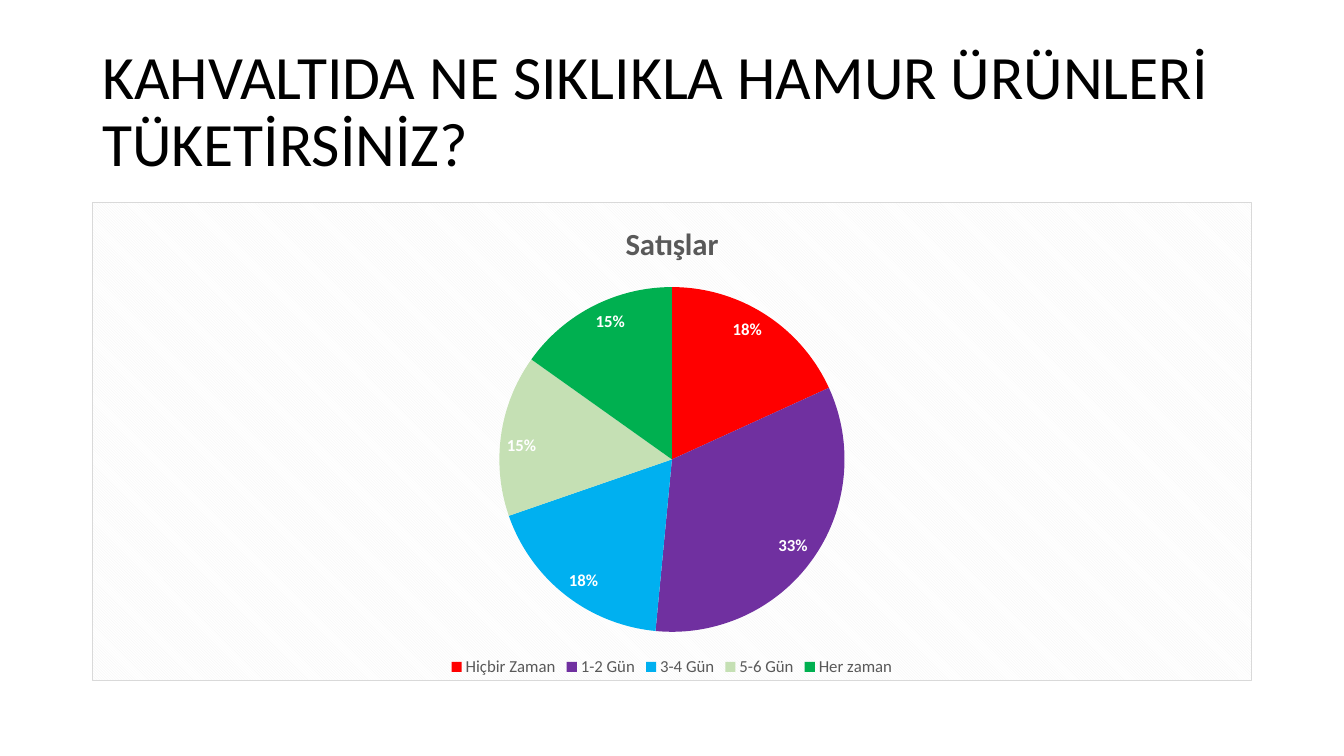
import dataclasses

import pptx
import pptx.chart.data
import pptx.dml.color
import pptx.enum.chart
import pptx.enum.text
import pptx.oxml
import pptx.oxml.ns
import pptx.util

PX = 9525


@dataclasses.dataclass(frozen=True)
class Theme:
    font: str = "Calibri"
    ink: str = "000000"
    muted: str = "595959"
    label: str = "FFFFFF"
    hatch: str = "F2F2F2"
    paper: str = "FFFFFF"
    border: str = "D9D9D9"
    heading_size: int = 44
    chart_title_size: int = 22
    chart_text_size: int = 12


THEME = Theme()

HEADING = "KAHVALTIDA NE SIKLIKLA HAMUR ÜRÜNLERİ TÜKETİRSİNİZ?"
CHART_TITLE = "Satışlar"
ANSWERS = [
    ("Hiçbir Zaman", 18, "FF0000"),
    ("1-2 Gün", 33, "7030A0"),
    ("3-4 Gün", 18, "00B0F0"),
    ("5-6 Gün", 15, "C5E0B4"),
    ("Her zaman", 15, "00B050"),
]


def to_emu(box):
    return [pptx.util.Emu(length * PX) for length in box]


def style_font(font, size, color, bold=False):
    font.name = THEME.font
    font.size = pptx.util.Pt(size)
    font.bold = bold
    font.color.rgb = pptx.dml.color.RGBColor.from_string(color)


def add_heading(slide, box):
    frame = slide.shapes.add_textbox(*to_emu(box)).text_frame
    frame.word_wrap = True
    frame.vertical_anchor = pptx.enum.text.MSO_ANCHOR.MIDDLE
    frame.text = HEADING
    question = frame.paragraphs[0]
    question.line_spacing = 0.9
    style_font(question.runs[0].font, THEME.heading_size, THEME.ink)


def hatch_background(chart):
    background = pptx.oxml.parse_xml(
        f'<c:spPr {pptx.oxml.ns.nsdecls("c", "a")}>'
        '<a:pattFill prst="dkDnDiag">'
        f'<a:fgClr><a:srgbClr val="{THEME.hatch}"/></a:fgClr>'
        f'<a:bgClr><a:srgbClr val="{THEME.paper}"/></a:bgClr>'
        '</a:pattFill>'
        f'<a:ln w="{pptx.util.Pt(0.75)}"><a:solidFill>'
        f'<a:srgbClr val="{THEME.border}"/>'
        '</a:solidFill></a:ln></c:spPr>'
    )
    chart.element.find(pptx.oxml.ns.qn("c:chart")).addnext(background)


def add_answer_chart(slide, box):
    answers = pptx.chart.data.CategoryChartData()
    answers.categories = [name for name, _, _ in ANSWERS]
    answers.add_series(CHART_TITLE, [value for _, value, _ in ANSWERS])
    chart = slide.shapes.add_chart(
        pptx.enum.chart.XL_CHART_TYPE.PIE, *to_emu(box), answers
    ).chart
    style_font(chart.font, THEME.chart_text_size, THEME.muted)
    hatch_background(chart)

    chart.has_title = True
    title = chart.chart_title.text_frame
    title.text = CHART_TITLE
    style_font(title.paragraphs[0].runs[0].font, THEME.chart_title_size, THEME.muted, True)

    chart.has_legend = True
    chart.legend.position = pptx.enum.chart.XL_LEGEND_POSITION.BOTTOM
    chart.legend.include_in_layout = False
    style_font(chart.legend.font, THEME.chart_text_size, THEME.muted)

    pie = chart.plots[0]
    pie.vary_by_categories = True
    for index, (_, _, color) in enumerate(ANSWERS):
        fill = pie.series[0].points[index].format.fill
        fill.solid()
        fill.fore_color.rgb = pptx.dml.color.RGBColor.from_string(color)

    labels = pie.series[0].data_labels
    labels.show_percentage = True
    labels.show_value = False
    labels.number_format = "0%"
    labels.number_format_is_linked = False
    labels.position = pptx.enum.chart.XL_LABEL_POSITION.INSIDE_END
    style_font(labels.font, THEME.chart_text_size, THEME.label, True)


def main():
    deck = pptx.Presentation()
    deck.slide_width, deck.slide_height = to_emu((1280, 720))
    slide = deck.slides.add_slide(deck.slide_layouts[6])
    left, width = 88, 1104
    add_heading(slide, (left, 38, width, 139))
    add_answer_chart(slide, (left, 192, width, 457))
    deck.save("out.pptx")


if __name__ == "__main__":
    main()
